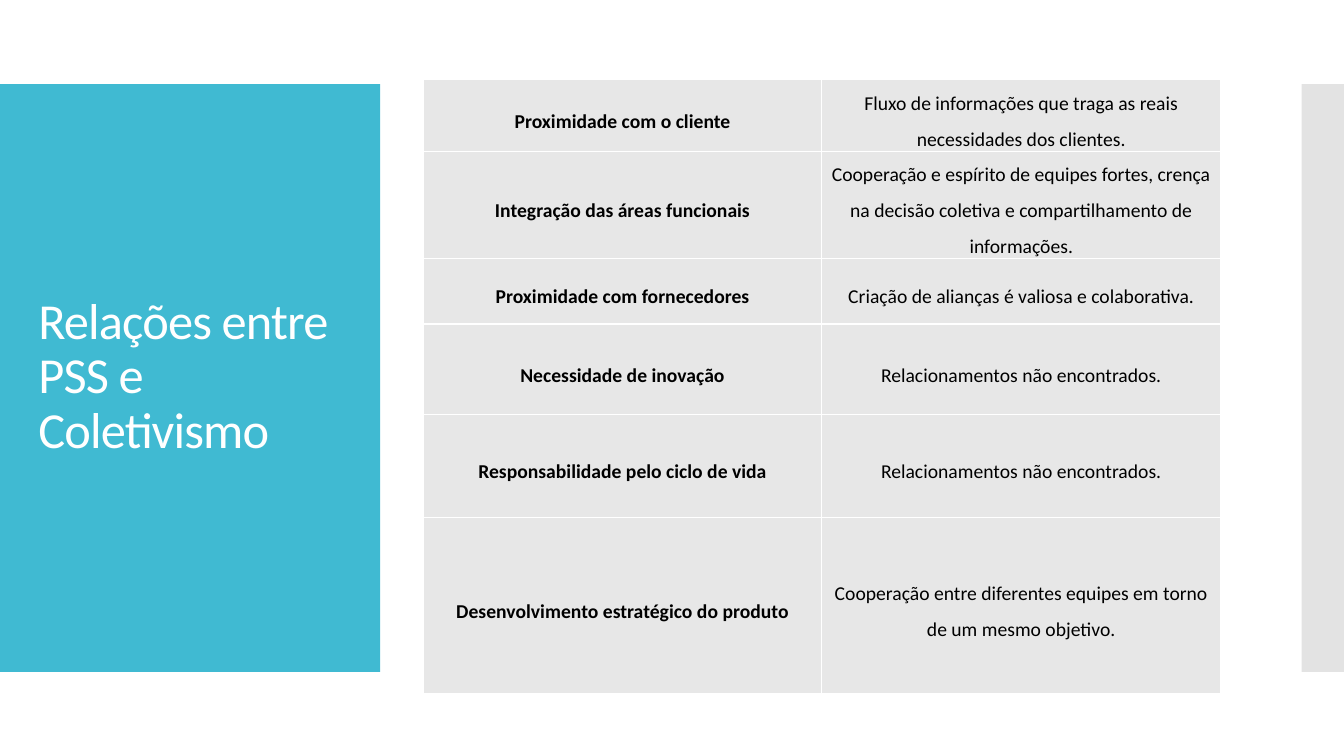
from dataclasses import dataclass

from lxml import etree
from pptx import Presentation, util as u
from pptx.dml.color import RGBColor
from pptx.enum import shapes, text
from pptx.oxml import ns

SLIDE_WIDTH, SLIDE_HEIGHT = 13.33, 7.5


@dataclass(frozen=True)
class Theme:
    font: str = "Calibri"
    title_size: float = 36
    cell_size: float = 14
    accent: str = "40BAD2"
    side: str = "C8C8C8"
    cell: str = "E7E7E7"
    light: str = "FFFFFF"
    ink: str = "000000"


@dataclass(frozen=True)
class Area:
    """A rectangle in inches."""
    left: float
    top: float
    width: float
    height: float

    def emu(self) -> list[int]:
        return [u.Inches(n) for n in (self.left, self.top, self.width, self.height)]


@dataclass(frozen=True)
class Band:
    left: float
    width: float
    color: str
    opacity: int = 100


@dataclass(frozen=True)
class Relation:
    factor: str
    finding: str
    height: float


THEME = Theme()
BAND_TOP, BAND_HEIGHT = SLIDE_HEIGHT / 9, SLIDE_HEIGHT * 7 / 9
SIDE_WIDTH = 0.42
BANDS = [
    Band(0, 3.77, THEME.accent),
    Band(SLIDE_WIDTH - SIDE_WIDTH, SIDE_WIDTH, THEME.side, 50),
]
TITLE_AREA = Area(0.28, 1.23, 3.22, 5.03)
COLUMN_WIDTHS = (3.95, 3.96)
COLUMN_INSETS = (0.06, 0.07)
RELATIONS = [
    Relation("Proximidade com o cliente",
             "Fluxo de informações que traga as reais necessidades dos clientes.", 0.68),
    Relation("Integração das áreas funcionais",
             "Cooperação e espírito de equipes fortes, crença na decisão coletiva "
             "e compartilhamento de informações.", 1.02),
    Relation("Proximidade com fornecedores",
             "Criação de alianças é valiosa e colaborativa.", 0.65),
    Relation("Necessidade de inovação", "Relacionamentos não encontrados.", 0.9),
    Relation("Responsabilidade pelo ciclo de vida", "Relacionamentos não encontrados.", 1.02),
    Relation("Desenvolvimento estratégico do produto",
             "Cooperação entre diferentes equipes em torno de um mesmo objetivo.", 1.75),
]
TABLE_AREA = Area(4.2, 0.79, sum(COLUMN_WIDTHS), sum(r.height for r in RELATIONS))


def style_paragraph(paragraph, size: float, color: str, align, spacing: float,
                    bold: bool = False) -> None:
    paragraph.alignment = align
    paragraph.line_spacing = spacing
    font = paragraph.font
    font.name, font.size, font.bold = THEME.font, u.Pt(size), bold
    font.color.rgb = RGBColor.from_string(color)


def add_band(slide, band: Band):
    area = Area(band.left, BAND_TOP, band.width, BAND_HEIGHT)
    panel = slide.shapes.add_shape(shapes.MSO_SHAPE.RECTANGLE, *area.emu())
    panel.shadow.inherit = False
    panel.line.fill.background()
    panel.fill.solid()
    panel.fill.fore_color.rgb = RGBColor.from_string(band.color)
    if band.opacity < 100:
        color = panel._element.spPr.find(".//" + ns.qn("a:srgbClr"))
        etree.SubElement(color, ns.qn("a:alpha"), val=str(band.opacity * 1000))
    return panel


def fill_title(title) -> None:
    title.left, title.top, title.width, title.height = TITLE_AREA.emu()
    frame = title.text_frame
    frame.text = "Relações entre PSS e Coletivismo"
    frame.word_wrap = True
    frame.auto_size = text.MSO_AUTO_SIZE.NONE
    frame.vertical_anchor = text.MSO_ANCHOR.MIDDLE
    heading = frame.paragraphs[0]
    style_paragraph(heading, THEME.title_size, THEME.light, text.PP_ALIGN.LEFT, 0.9)
    heading.runs[0].font._element.set("spc", "-60")


def add_borders(cell) -> None:
    properties = cell._tc.get_or_add_tcPr()
    for side in ("lnL", "lnR", "lnT", "lnB"):
        line = etree.SubElement(properties, ns.qn("a:" + side), w=str(u.Pt(1)))
        fill = etree.SubElement(line, ns.qn("a:solidFill"))
        etree.SubElement(fill, ns.qn("a:srgbClr"), val=THEME.light)


def fill_cell(cell, content: str, inset: float, bold: bool) -> None:
    cell.text = content
    cell.vertical_anchor = text.MSO_ANCHOR.MIDDLE
    cell.margin_left = cell.margin_right = u.Inches(inset)
    cell.margin_top = cell.margin_bottom = 0
    add_borders(cell)
    cell.fill.solid()
    cell.fill.fore_color.rgb = RGBColor.from_string(THEME.cell)
    style_paragraph(cell.text_frame.paragraphs[0], THEME.cell_size, THEME.ink,
                    text.PP_ALIGN.CENTER, 1.5, bold)


def add_relations(slide) -> None:
    table = slide.shapes.add_table(
        len(RELATIONS), len(COLUMN_WIDTHS), *TABLE_AREA.emu()).table
    table.first_row = table.horz_banding = False
    for column, width in zip(table.columns, COLUMN_WIDTHS):
        column.width = u.Inches(width)
    for row, relation in zip(table.rows, RELATIONS):
        row.height = u.Inches(relation.height)
        contents = (relation.factor, relation.finding)
        for index, (cell, content) in enumerate(zip(row.cells, contents)):
            fill_cell(cell, content, COLUMN_INSETS[index], bold=index == 0)


def main() -> None:
    deck = Presentation()
    deck.slide_width, deck.slide_height = u.Inches(SLIDE_WIDTH), u.Inches(SLIDE_HEIGHT)
    slide = deck.slides.add_slide(deck.slide_layouts.get_by_name("Title Only"))
    title = slide.shapes.title
    for band in BANDS:
        title._element.addprevious(add_band(slide, band)._element)
    fill_title(title)
    add_relations(slide)
    deck.save("out.pptx")


if __name__ == "__main__":
    main()
